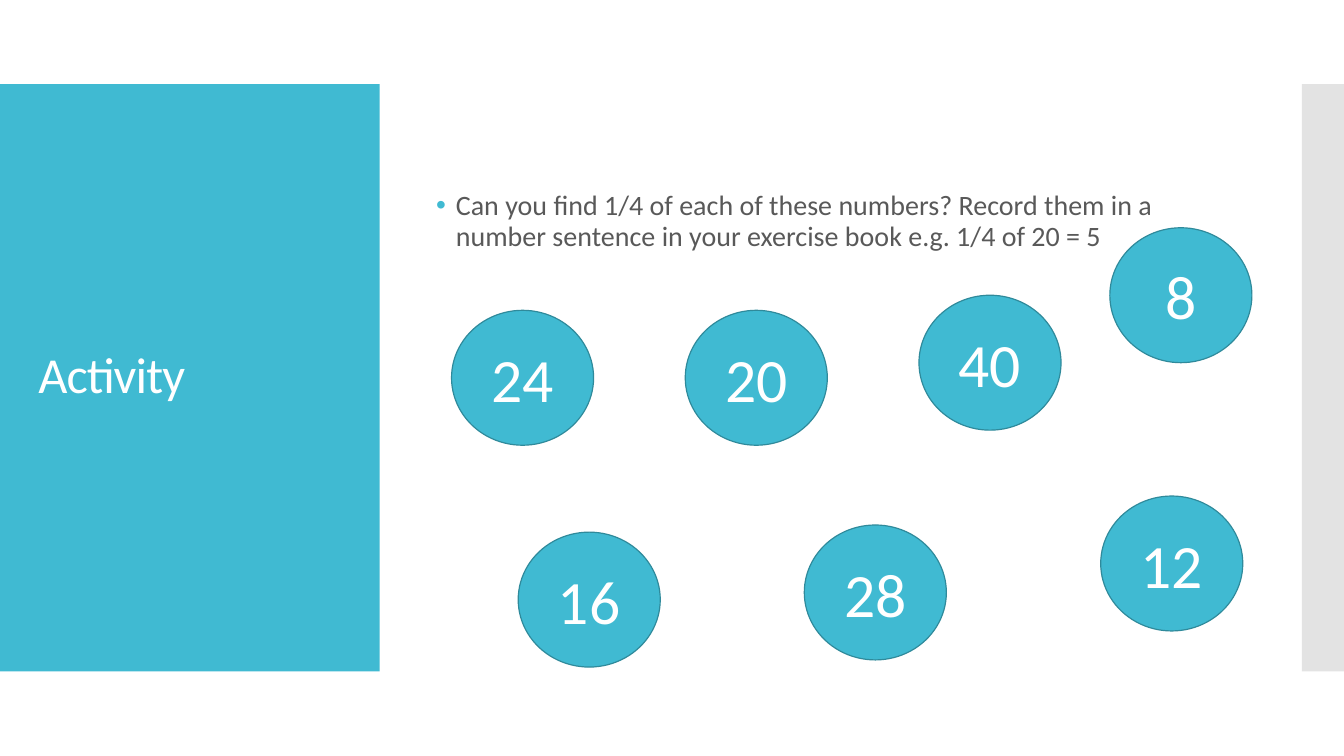
from pptx import Presentation
from pptx.dml.color import RGBColor
from pptx.enum.shapes import MSO_SHAPE
from pptx.enum.text import MSO_ANCHOR, MSO_AUTO_SIZE, PP_ALIGN
from pptx.oxml.ns import qn
from pptx.util import Cm, Pt
from lxml import etree

RECTANGLE, OVAL = MSO_SHAPE.RECTANGLE, MSO_SHAPE.OVAL
TOP, MIDDLE = MSO_ANCHOR.TOP, MSO_ANCHOR.MIDDLE
LEFT, CENTER = PP_ALIGN.LEFT, PP_ALIGN.CENTER
NO_AUTOFIT = MSO_AUTO_SIZE.NONE

# Content
HEADING = "Activity"
TASK = ("Can you find 1/4 of each of these numbers? Record them in a number "
        "sentence in your exercise book e.g. 1/4 of 20 = 5")
NUMBERS = [  # number, left and top of its circle in cm
    ("28", 20.27, 13.23),
    ("16", 13.06, 13.41),
    ("24", 11.38, 7.82),
    ("20", 17.27, 7.82),
    ("12", 27.74, 12.5),
    ("40", 23.16, 7.44),
    ("8", 27.97, 5.74),
]


class Theme:
    font = "Calibri"
    accent = RGBColor(0x40, 0xBA, 0xD2)
    outline = RGBColor(0x2F, 0x8A, 0x9B)
    side = RGBColor(0xC8, 0xC8, 0xC8)
    body = RGBColor(0x59, 0x59, 0x59)
    white = RGBColor(0xFF, 0xFF, 0xFF)
    heading_size, task_size, number_size = Pt(36), Pt(20), Pt(44)


# Layout in cm
SLIDE_W, SLIDE_H = 33.87, 19.05
PANEL_TOP, PANEL_H = 2.12, 14.8
HEADING_PANEL_W, SIDE_W = 9.57, 1.06
CIRCLE_W, CIRCLE_H = 3.58, 3.4


def write(frame, text, *, size, color, align=LEFT, anchor=MIDDLE,
          line_spacing=1.0, tracking=0, bullet_color=None):
    frame.word_wrap = True
    frame.auto_size = NO_AUTOFIT
    frame.vertical_anchor = anchor
    paragraph = frame.paragraphs[0]
    paragraph.alignment = align
    paragraph.line_spacing = line_spacing
    if bullet_color is not None:
        props = paragraph._p.get_or_add_pPr()
        props.set("marL", str(Cm(0.5)))
        props.set("indent", str(-Cm(0.5)))
        color_holder = etree.SubElement(props, qn("a:buClr"))
        etree.SubElement(color_holder, qn("a:srgbClr"), val=str(bullet_color))
        etree.SubElement(props, qn("a:buFont"), typeface="Arial")
        etree.SubElement(props, qn("a:buChar"), char="•")
    run = paragraph.add_run()
    run.text = text
    run.font.name = Theme.font
    run.font.size = size
    run.font.color.rgb = color
    if tracking:
        run.font._element.set("spc", str(tracking))


def add_filled(slide, preset, box, fill, outline=None):
    shape = slide.shapes.add_shape(preset, *map(Cm, box))
    shape.shadow.inherit = False
    shape.fill.solid()
    shape.fill.fore_color.rgb = fill
    if outline is None:
        shape.line.fill.background()
    else:
        shape.line.color.rgb = outline
        shape.line.width = Pt(0.85)
    return shape


def main():
    deck = Presentation()
    deck.slide_width, deck.slide_height = Cm(SLIDE_W), Cm(SLIDE_H)
    slide = deck.slides.add_slide(deck.slide_layouts.get_by_name("Title Only"))

    # Colour panels
    add_filled(slide, RECTANGLE, (0, PANEL_TOP, HEADING_PANEL_W, PANEL_H), Theme.accent)
    side_panel = add_filled(
        slide, RECTANGLE, (SLIDE_W - SIDE_W, PANEL_TOP, SIDE_W, PANEL_H), Theme.side)
    side_color = side_panel._element.spPr.find(f"{qn('a:solidFill')}/{qn('a:srgbClr')}")
    etree.SubElement(side_color, qn("a:alpha"), val="50000")

    # Heading, brought in front of its panel
    heading = slide.shapes.title
    heading.left, heading.top, heading.width, heading.height = map(
        Cm, (0.71, 3.12, 8.18, 12.78))
    slide.shapes._spTree.append(heading._element)
    write(heading.text_frame, HEADING, size=Theme.heading_size,
          color=Theme.white, line_spacing=0.9, tracking=-60)

    # Task
    task = slide.shapes.add_textbox(*map(Cm, (10.74, 2.39, 20.32, 14.22)))
    task.text_frame.margin_top = Cm(2.44)
    write(task.text_frame, TASK, size=Theme.task_size, color=Theme.body,
          anchor=TOP, line_spacing=0.9, bullet_color=Theme.accent)

    # Number circles
    for number, left, top in NUMBERS:
        circle = add_filled(slide, OVAL, (left, top, CIRCLE_W, CIRCLE_H),
                            Theme.accent, Theme.outline)
        write(circle.text_frame, number, size=Theme.number_size,
              color=Theme.white, align=CENTER)

    deck.save("out.pptx")


if __name__ == "__main__":
    main()
